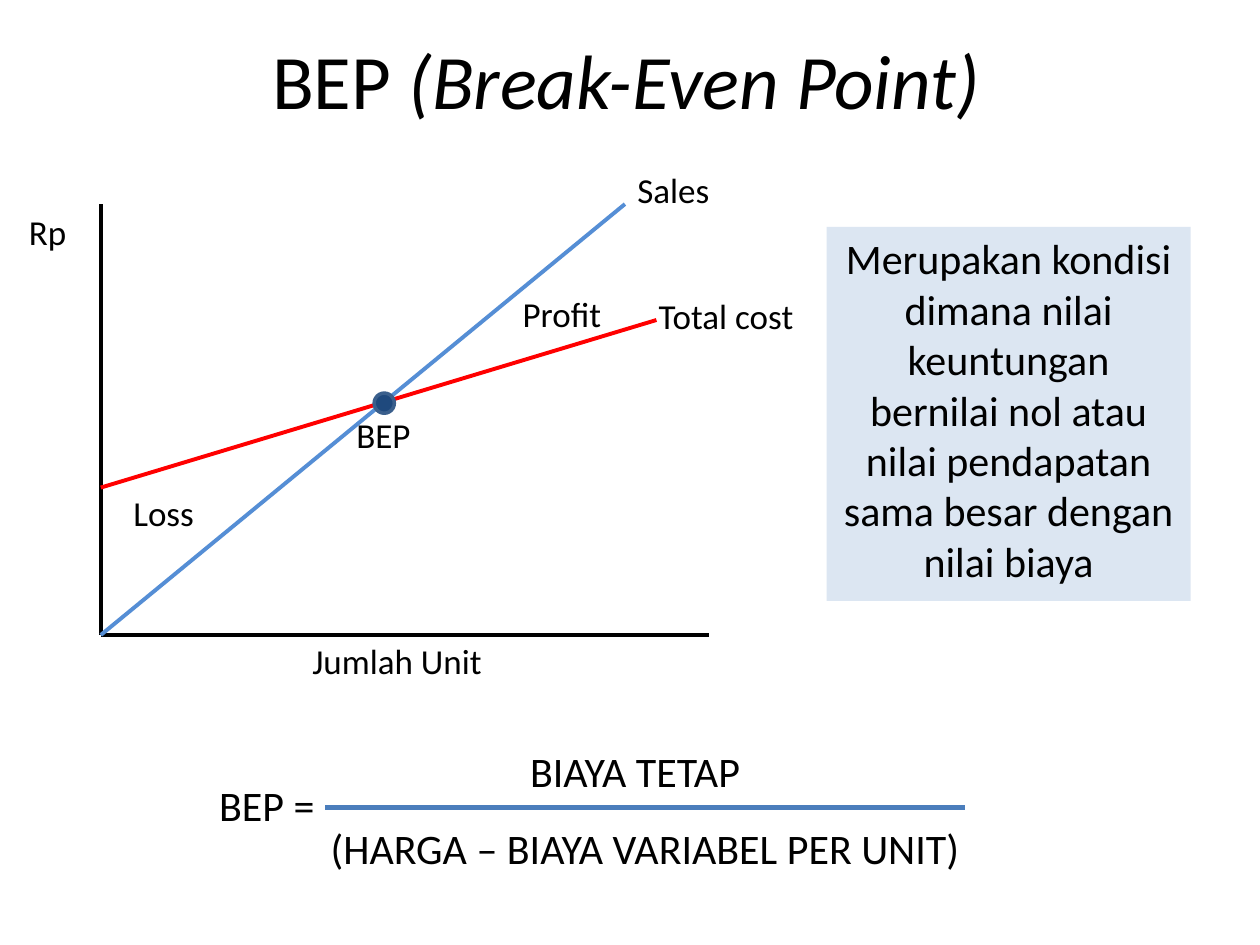
from pptx import Presentation
from pptx.dml.color import RGBColor
from pptx.enum.shapes import MSO_CONNECTOR, MSO_SHAPE
from pptx.enum.text import MSO_ANCHOR, PP_ALIGN
from pptx.oxml.ns import qn
from pptx.util import Inches, Pt
from lxml.etree import SubElement


def color(value):
    return RGBColor.from_string(value)


def set_formats(target, formats):
    for name, value in formats.items():
        setattr(target, name, value)


class Page:
    font = {"name": "Calibri"}
    ink = "000000"

    def __init__(self, deck):
        self.shapes = deck.slides.add_slide(deck.slide_layouts[6]).shapes

    def fill_text(self, box, spans, size, align, anchor):
        set_formats(box.text_frame, {"word_wrap": True, "vertical_anchor": anchor})
        para = box.text_frame.paragraphs[0]
        para.alignment = align
        for text, italic in spans:
            span = para.add_run()
            span.text = text
            set_formats(span.font, {**self.font, "size": Pt(size), "italic": italic})
            span.font.color.rgb = color(self.ink)

    def text(self, frame, spans, size=20, align=PP_ALIGN.LEFT, anchor=MSO_ANCHOR.TOP):
        box = self.shapes.add_textbox(*map(Inches, frame))
        self.fill_text(box, spans, size, align, anchor)

    def shape(self, kind, frame, fill, outline=None, width=0):
        box = self.shapes.add_shape(kind, *map(Inches, frame))
        box.shadow.inherit = False
        box.fill.solid()
        box.fill.fore_color.rgb = color(fill)
        if outline:
            box.line.color.rgb = color(outline)
            box.line.width = Pt(width)
        else:
            box.line.fill.background()
        return box

    def panel(self, frame, fill, text, size):
        box = self.shape(MSO_SHAPE.RECTANGLE, frame, fill)
        self.fill_text(box, [(text, None)], size, PP_ALIGN.CENTER, MSO_ANCHOR.TOP)

    def line(self, start, end, stroke, width=2.25):
        line = self.shapes.add_connector(MSO_CONNECTOR.STRAIGHT, *map(Inches, start + end))
        line.line.color.rgb = color(stroke)
        line.line.width = Pt(width)
        SubElement(line._element.spPr, qn("a:effectLst"))


def main():
    deck = Presentation()
    set_formats(deck, {"slide_width": Inches(10), "slide_height": Inches(7.5)})
    page = Page(deck)

    page.text((0.47, 0, 9, 1.25), [("BEP", None), (" (Break-Even Point)", True)],
              44, PP_ALIGN.CENTER, MSO_ANCHOR.MIDDLE)
    page.panel((6.56, 1.8, 2.89, 2.97), "DCE6F2",
               "Merupakan kondisi dimana nilai keuntungan bernilai nol atau "
               "nilai pendapatan sama besar dengan nilai biaya", 24)

    page.line((2.58, 6.41), (7.66, 6.41), "4B7EBC", 3)
    page.text((1.64, 6.14, 1.17, 0.5), [("BEP =", None)], 24)
    page.text((3.83, 5.87, 2.42, 0.5), [("BIAYA TETAP", None)], 24, PP_ALIGN.CENTER)
    page.text((2.27, 6.48, 5.7, 0.55), [("(HARGA – BIAYA VARIABEL PER UNIT)", None)],
              24, PP_ALIGN.CENTER)

    origin = (0.8, 5.04)
    page.line((0.8, 1.62), origin, "000000")
    page.line(origin, (5.63, 5.04), "000000")
    page.line(origin, (4.96, 1.62), "558ED5")
    page.line((0.8, 3.87), (5.21, 2.54), "FF0000")

    labels = [
        ("Rp", 0.13, 1.62, 1.25),
        ("Jumlah Unit", 2.38, 5.03, 2.08),
        ("Total cost", 5.13, 2.29, 1.67),
        ("Sales", 4.96, 1.29, 1.67),
        ("Profit", 4.05, 2.27, 1.67),
        ("BEP", 2.73, 3.23, 0.88),
        ("Loss", 0.96, 3.85, 1.67),
    ]
    for label, left, top, width in labels:
        page.text((left, top, width, 0.44), [(label, None)])

    page.shape(MSO_SHAPE.OVAL, (2.97, 3.12, 0.16, 0.16), "1F497D", "3A5F8C", 2)
    deck.save("out.pptx")


if __name__ == "__main__":
    main()
